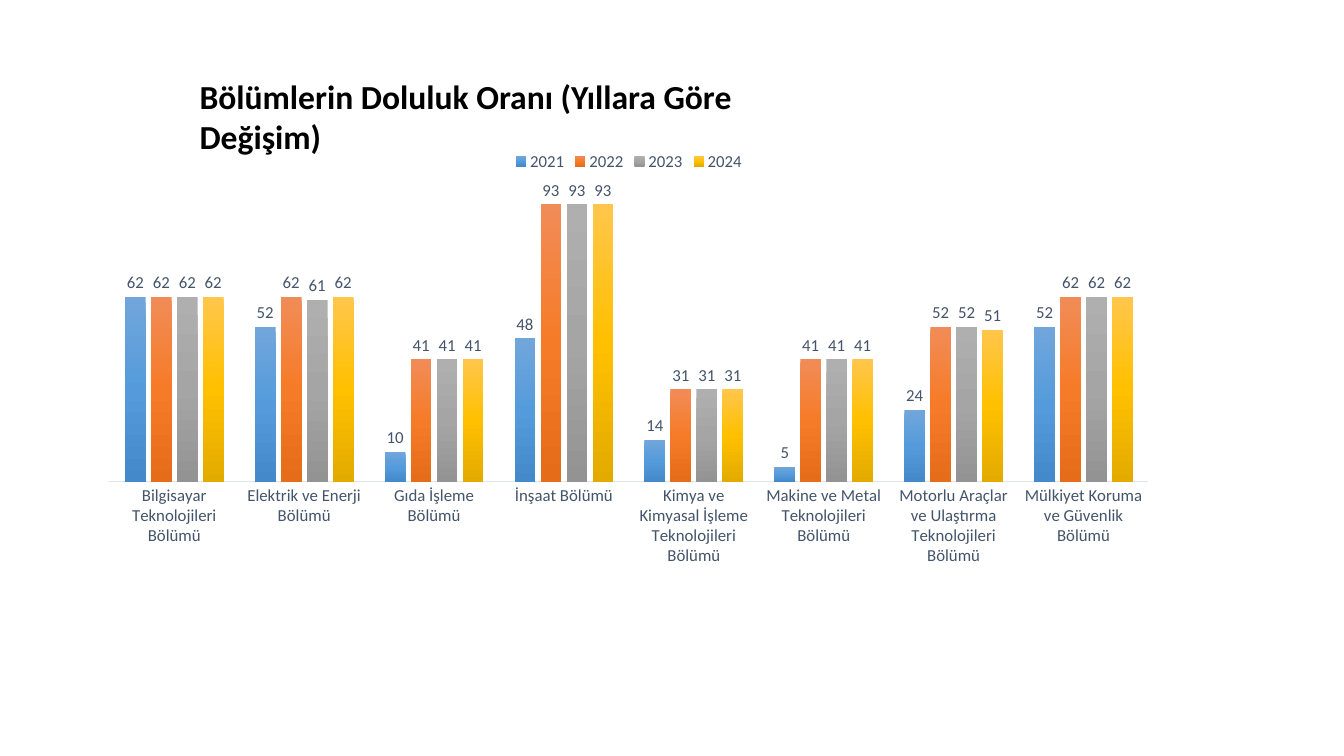
import copy

import pptx
import pptx.chart.data
import pptx.dml.color
import pptx.enum.chart
import pptx.enum.text
import pptx.oxml
import pptx.oxml.ns
import pptx.util

Cm = pptx.util.Cm
Pt = pptx.util.Pt
RGBColor = pptx.dml.color.RGBColor

BLACK = RGBColor(0x00, 0x00, 0x00)
SLATE = RGBColor(0x44, 0x54, 0x6A)
AXIS_GREY = RGBColor(0xE0, 0xE5, 0xEB)
BLUES = (RGBColor(0x71, 0xA6, 0xDB), RGBColor(0x55, 0x9B, 0xDB), RGBColor(0x44, 0x8A, 0xCA))
ORANGES = (RGBColor(0xF1, 0x8C, 0x57), RGBColor(0xF6, 0x7B, 0x28), RGBColor(0xE5, 0x6C, 0x19))
GREYS = (RGBColor(0xAF, 0xAF, 0xAF), RGBColor(0xA5, 0xA5, 0xA5), RGBColor(0x93, 0x93, 0x93))
YELLOWS = (RGBColor(0xFF, 0xC6, 0x4B), RGBColor(0xFF, 0xC0, 0x00), RGBColor(0xE3, 0xAB, 0x00))

DEPARTMENTS = [
    "Bilgisayar Teknolojileri Bölümü",
    "Elektrik ve Enerji Bölümü",
    "Gıda İşleme Bölümü",
    "İnşaat Bölümü",
    "Kimya ve Kimyasal İşleme Teknolojileri Bölümü",
    "Makine ve Metal Teknolojileri Bölümü",
    "Motorlu Araçlar ve Ulaştırma Teknolojileri Bölümü",
    "Mülkiyet Koruma ve Güvenlik Bölümü",
]
# Year: (occupancy per department, gradient from top to bottom)
YEARS = {
    "2021": ((62, 52, 10, 48, 14, 5, 24, 52), BLUES),
    "2022": ((62, 62, 41, 93, 31, 41, 52, 62), ORANGES),
    "2023": ((62, 61, 41, 93, 31, 41, 52, 62), GREYS),
    "2024": ((62, 62, 41, 93, 31, 41, 51, 62), YELLOWS),
}


class OccupancySlide:
    font_name = "Calibri"

    def __init__(self, presentation):
        self.slide = presentation.slides.add_slide(presentation.slide_layouts[6])

    def style(self, font, size, color, bold=False):
        font.name = self.font_name
        font.size = Pt(size)
        font.bold = bold
        font.color.rgb = color

    def title(self, text, left, top, width, height):
        box = self.slide.shapes.add_textbox(Cm(left), Cm(top), Cm(width), Cm(height))
        frame = box.text_frame
        frame.word_wrap = True
        frame.auto_size = pptx.enum.text.MSO_AUTO_SIZE.SHAPE_TO_FIT_TEXT
        frame.text = text
        self.style(frame.paragraphs[0].font, 24, BLACK, bold=True)

    def column_chart(self, departments, years, left, top, width, height):
        data = pptx.chart.data.CategoryChartData(number_format="0")
        data.categories = departments
        for year, (values, _) in years.items():
            data.add_series(year, values)
        chart = self.slide.shapes.add_chart(
            pptx.enum.chart.XL_CHART_TYPE.COLUMN_CLUSTERED,
            Cm(left), Cm(top), Cm(width), Cm(height), data,
        ).chart
        self.style(chart.font, 10, BLACK)
        chart.has_title = False

        # Legend
        chart.has_legend = True
        chart.legend.position = pptx.enum.chart.XL_LEGEND_POSITION.TOP
        chart.legend.include_in_layout = False
        self.style(chart.legend.font, 12, SLATE)

        # Axes
        no_tick = pptx.enum.chart.XL_TICK_MARK.NONE
        chart.category_axis.major_tick_mark = no_tick
        chart.category_axis.minor_tick_mark = no_tick
        chart.category_axis.format.line.color.rgb = AXIS_GREY
        chart.category_axis.format.line.width = Pt(0.75)
        self.style(chart.category_axis.tick_labels.font, 12, SLATE)
        chart.value_axis.minimum_scale = 0
        chart.value_axis.maximum_scale = 100
        chart.value_axis.has_major_gridlines = False
        chart.value_axis.visible = False

        # Columns
        plot = chart.plots[0]
        plot.gap_width = 150
        plot.overlap = -25
        plot.vary_by_categories = False
        for series, (_, colors) in zip(plot.series, years.values()):
            self.gradient(series, colors)
            labels = series.data_labels
            labels.show_value = True
            labels.position = pptx.enum.chart.XL_LABEL_POSITION.OUTSIDE_END
            self.style(labels.font, 12, SLATE)
        self.place_plot(chart, x=0.02, y=0.1, w=0.96, h=0.69)

    def gradient(self, series, colors):
        fill = series.format.fill
        fill.gradient()
        fill.gradient_angle = 270
        # A new gradient has two stops; add the middle one
        stop_list = series.format.fill.gradient_stops
        xml_stops = next(series._element.iter(pptx.oxml.ns.qn("a:gsLst")))
        xml_stops.append(copy.deepcopy(xml_stops[0]))
        stop_list = fill.gradient_stops
        for stop, color, position in zip(stop_list, colors, (0, 0.5, 1)):
            stop.color.rgb = color
            stop.position = position

    def place_plot(self, chart, **fractions):
        plot_area = next(chart._chartSpace.iter(pptx.oxml.ns.qn("c:plotArea")))
        for automatic in plot_area.findall(pptx.oxml.ns.qn("c:layout")):
            plot_area.remove(automatic)
        sizes = "".join(f'<c:{key} val="{value}"/>' for key, value in fractions.items())
        plot_area.insert(0, pptx.oxml.parse_xml(
            f'<c:layout {pptx.oxml.ns.nsdecls("c")}><c:manualLayout>'
            '<c:layoutTarget val="inner"/><c:xMode val="edge"/><c:yMode val="edge"/>'
            f'{sizes}</c:manualLayout></c:layout>'
        ))


def main():
    presentation = pptx.Presentation()
    presentation.slide_width = Cm(33.87)
    presentation.slide_height = Cm(19.05)
    page = OccupancySlide(presentation)
    page.title("Bölümlerin Doluluk Oranı (Yıllara Göre Değişim)", 4.78, 1.78, 16.4, 1.28)
    page.column_chart(DEPARTMENTS, YEARS, 2.21, 3.53, 27.28, 10.9)
    presentation.save("out.pptx")


if __name__ == "__main__":
    main()
